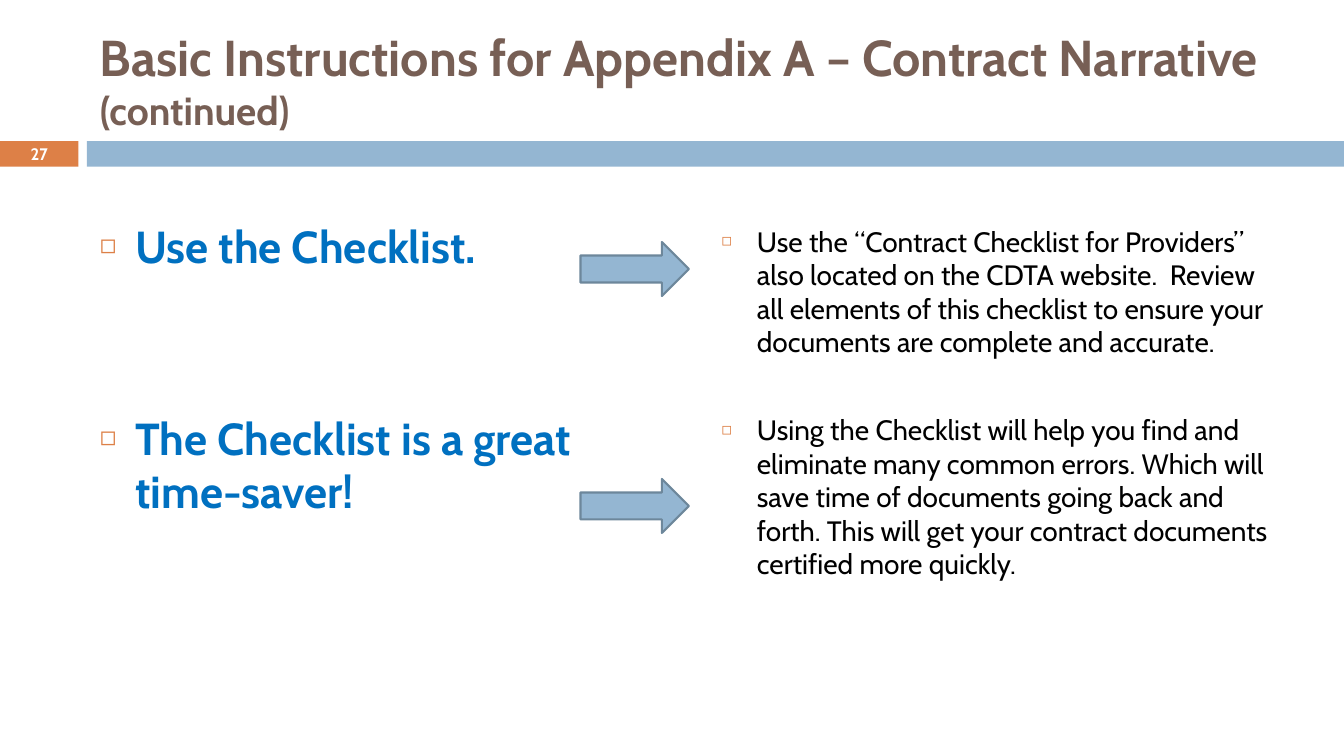
from lxml import etree
from pptx import Presentation
from pptx import util as u
from pptx.dml.color import RGBColor
from pptx.enum import shapes, text
from pptx.oxml.ns import qn

HUES = {"orange": "DD8047", "blue": "94B6D2", "edge": "6D879B", "brown": "775F55",
        "link": "0070C0", "black": "000000", "white": "FFFFFF"}
INDENT = u.Cm(0.89)


def style(run, size, hue, bold=False):
    """Set the font of one run."""
    for key, val in {"name": "Cabin", "size": u.Pt(size), "bold": bold}.items():
        setattr(run.font, key, val)
    run.font.color.rgb = RGBColor.from_string(HUES[hue])


def block(kind, box, hue):
    """Add a filled shape without outline or shadow; box is in cm."""
    item = slide.shapes.add_shape(kind, *map(u.Cm, box))
    item.shadow.inherit = False
    item.fill.solid()
    item.fill.fore_color.rgb = RGBColor.from_string(HUES[hue])
    item.line.fill.background()
    return item


deck = Presentation()
deck.slide_width, deck.slide_height = u.Cm(33.87), u.Cm(19.05)
slide = deck.slides.add_slide(deck.slide_layouts[3])
title, left, right = slide.placeholders

# Place the title and the two columns
boxes = [(title, (2.26, 0.64, 30.2, 2.74), text.MSO_ANCHOR.MIDDLE),
         (left, (2.26, 5.38, 14.4, 11.7), text.MSO_ANCHOR.TOP),
         (right, (17.93, 5.52, 14.4, 11.6), text.MSO_ANCHOR.TOP)]
for holder, box, anchor in boxes:
    for key, val in zip(("left", "top", "width", "height"), box):
        setattr(holder, key, u.Cm(val))
    frame = holder.text_frame
    for key, val in {"word_wrap": True, "auto_size": text.MSO_AUTO_SIZE.NONE,
                     "vertical_anchor": anchor}.items():
        setattr(frame, key, val)

# Title
head = title.text_frame.paragraphs[0]
head.alignment = text.PP_ALIGN.LEFT
for words, size in [("Basic Instructions for Appendix A – Contract Narrative ", 36),
                    ("(continued)", 28)]:
    run = head.add_run()
    run.text = words
    style(run, size, "brown", True)

# Bulleted columns: holder, size, hue, bold, gap between items, items
lists = [
    (left, 32, "link", True, 98.5,
     ["Use the Checklist.", "The Checklist is a great time-saver!"]),
    (right, 20, "black", False, 38.5,
     ["Use the “Contract Checklist for Providers” also located on the CDTA website.  "
      "Review all elements of this checklist to ensure your documents are complete "
      "and accurate.",
      "Using the Checklist will help you find and eliminate many common errors. "
      "Which will save time of documents going back and forth. This will get your "
      "contract documents certified more quickly."]),
]
for holder, size, hue, bold, gap, items in lists:
    frame = holder.text_frame
    for i, words in enumerate(items):
        para = frame.add_paragraph() if i else frame.paragraphs[0]
        para.space_before = u.Pt(gap if i else 0)
        props = para._p.get_or_add_pPr()
        props.set("marL", str(INDENT))
        props.set("indent", str(-INDENT))
        tint = etree.SubElement(props, qn("a:buClr"))
        etree.SubElement(tint, qn("a:srgbClr"), val=HUES["orange"])
        etree.SubElement(props, qn("a:buSzPct"), val="60000")
        etree.SubElement(props, qn("a:buChar"), char="◻")
        run = para.add_run()
        run.text = words
        style(run, size, hue, bold)

# Band with the page number
RECT = shapes.MSO_SHAPE.RECTANGLE
page = block(RECT, (0, 3.56, 1.98, 0.64), "orange")
block(RECT, (2.19, 3.56, 31.68, 0.64), "blue")
frame = page.text_frame
for side in ("left", "right", "top", "bottom"):
    setattr(frame, "margin_" + side, 0)
frame.vertical_anchor = text.MSO_ANCHOR.MIDDLE
para = frame.paragraphs[0]
para.alignment = text.PP_ALIGN.CENTER
run = para.add_run()
run.text = "27"
style(run, 11.9, "white", True)

# Arrows from each heading to its detail
for top in (6.1, 12.07):
    arrow = block(shapes.MSO_SHAPE.RIGHT_ARROW, (14.63, top, 2.73, 1.36), "blue")
    arrow.line.color.rgb = RGBColor.from_string(HUES["edge"])
    arrow.line.width = u.Pt(1.5)

deck.save("out.pptx")
